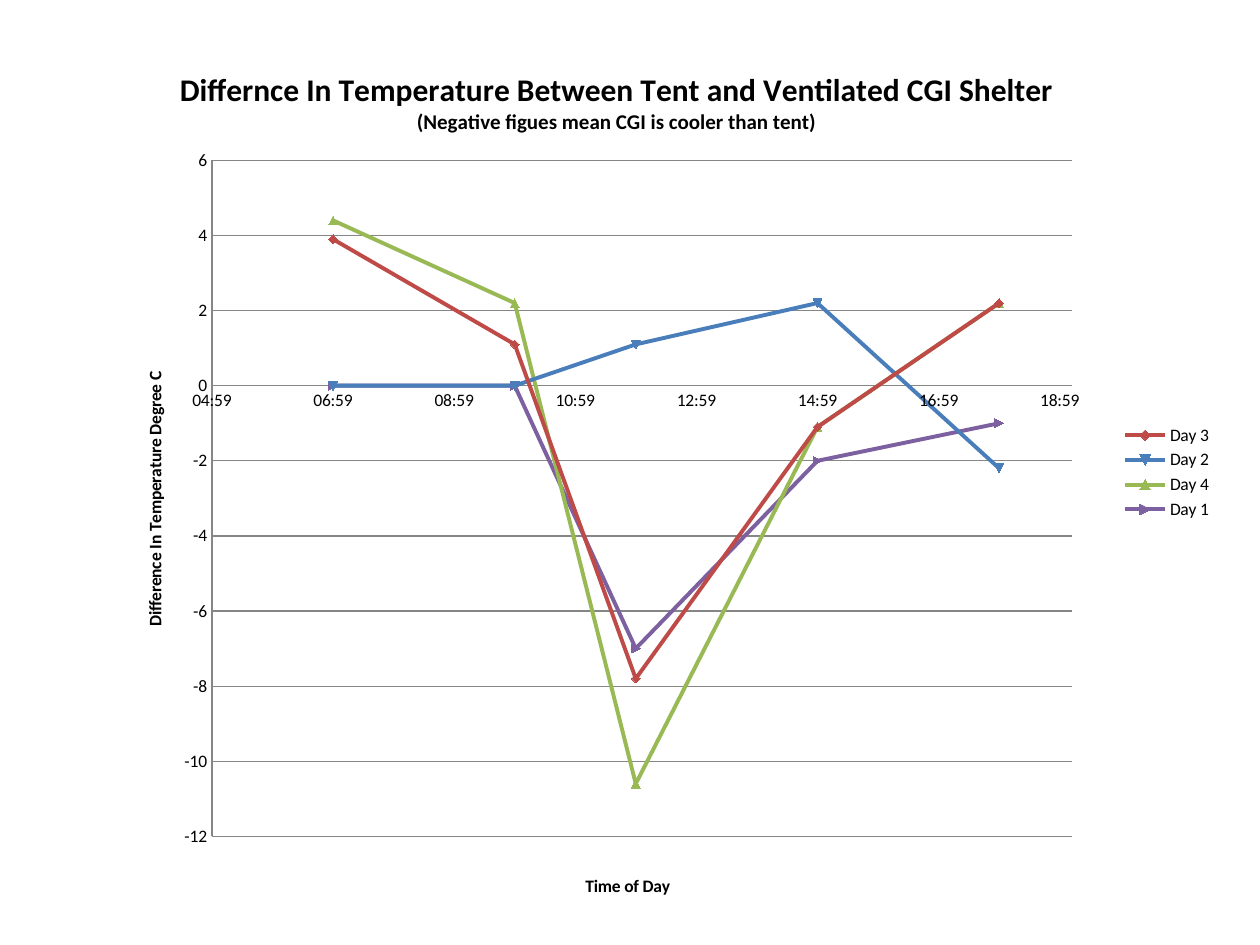
from lxml.etree import SubElement
from pptx import Presentation
from pptx.chart.data import XyChartData
from pptx.dml.color import RGBColor
from pptx.enum.chart import XL_CHART_TYPE, XL_LEGEND_POSITION, XL_TICK_MARK
from pptx.oxml.ns import qn
from pptx.util import Inches, Pt

FONT = "Calibri"
BLACK = "000000"
GREY = "868686"
HOURS = [7, 10, 12, 15, 18]
DAYS = [
    ("Day 3", "BE4B48", [3.9, 1.1, -7.8, -1.1, 2.2]),
    ("Day 2", "4A7EBB", [0, 0, 1.1, 2.2, -2.2]),
    ("Day 4", "98B954", [4.4, 2.2, -10.6, -1.1, 2.2]),
    ("Day 1", "7D60A0", [0, 0, -7, -2, -1]),
]


def color(code):
    return RGBColor.from_string(code)


def paint(line, code, width):
    line.color.rgb = color(code)
    line.width = Pt(width)


def place(part, index, inner=False, **edges):
    """Fix a chart part's layout as fractions of the chart; index is its child position."""
    for old in part.findall(qn("c:layout")):
        part.remove(old)
    layout = SubElement(part, qn("c:layout"))
    part.insert(index, layout)
    manual = SubElement(layout, qn("c:manualLayout"))
    if inner:
        SubElement(manual, qn("c:layoutTarget")).set("val", "inner")
    for name in ("x", "y"):
        SubElement(manual, qn(f"c:{name}Mode")).set("val", "edge")
    for name, value in edges.items():
        SubElement(manual, qn(f"c:{name}")).set("val", str(value))


def write(title, lines, x, y):
    frame = title.text_frame
    for i, (text, size) in enumerate(lines):
        para = frame.add_paragraph() if i else frame.paragraphs[0]
        run = para.add_run()
        run.text = text
        run.font.name = FONT
        run.font.size = Pt(size)
        run.font.bold = True
        run.font.color.rgb = color(BLACK)
    place(title._element, 1, x=x, y=y)


def scale(axis, low, high, step, form):
    axis.minimum_scale, axis.maximum_scale, axis.major_unit = low, high, step
    axis.major_tick_mark = axis.minor_tick_mark = XL_TICK_MARK.NONE
    axis.tick_labels.number_format = form
    axis.tick_labels.number_format_is_linked = False
    paint(axis.format.line, GREY, 0.75)


def add_chart(slide):
    data = XyChartData()
    for name, _, values in DAYS:
        series = data.add_series(name)
        for hour, value in zip(HOURS, values):
            series.add_data_point(hour / 24, value)
    chart = slide.shapes.add_chart(
        XL_CHART_TYPE.XY_SCATTER_SMOOTH, Inches(0.26), Inches(0.31),
        Inches(9.48), Inches(6.88), data).chart
    chart.font.name = FONT
    chart.font.size = Pt(10)
    chart.font.color.rgb = color(BLACK)
    return chart


def style_days(chart):
    for i, (series, day) in enumerate(zip(chart.plots[0].series, DAYS), 1):
        series.smooth = True
        paint(series.format.line, day[1], 2.25)
        # The automatic marker shape follows the series index.
        series._element.find(qn("c:idx")).set("val", str(i))


def style_axes(chart):
    time, temp = chart.category_axis, chart.value_axis
    # Just under 5/24 and 2/24, so that the labels read one minute early.
    scale(time, 0.208333, 0.8, 0.083333, "hh:mm;@")
    scale(temp, -12, 6, 2, "General")
    time.has_major_gridlines = False
    temp.has_major_gridlines = True
    paint(temp.major_gridlines.format.line, GREY, 0.75)
    write(time.axis_title, [("Time of Day", 10)], 0.46, 0.96)
    write(temp.axis_title, [("Difference In Temperature Degree C", 10)], 0.09, 0.38)


def main():
    deck = Presentation()
    deck.slide_width, deck.slide_height = Inches(10), Inches(7.5)
    slide = deck.slides.add_slide(deck.slide_layouts[6])
    chart = add_chart(slide)
    style_days(chart)
    style_axes(chart)
    chart.has_title = True
    write(chart.chart_title, [
        ("Differnce In Temperature Between Tent and Ventilated CGI Shelter", 18),
        ("(Negative figues mean CGI is cooler than tent)", 12),
    ], 0.12, 0.03)
    chart.has_legend = True
    chart.legend.position = XL_LEGEND_POSITION.RIGHT
    chart.legend.include_in_layout = False
    place(chart.legend._element, 1, x=0.91, y=0.44)
    place(chart._chartSpace.chart.plotArea, 0, inner=True,
          x=0.15, y=0.14, w=0.72, h=0.78)
    deck.save("out.pptx")


if __name__ == "__main__":
    main()
